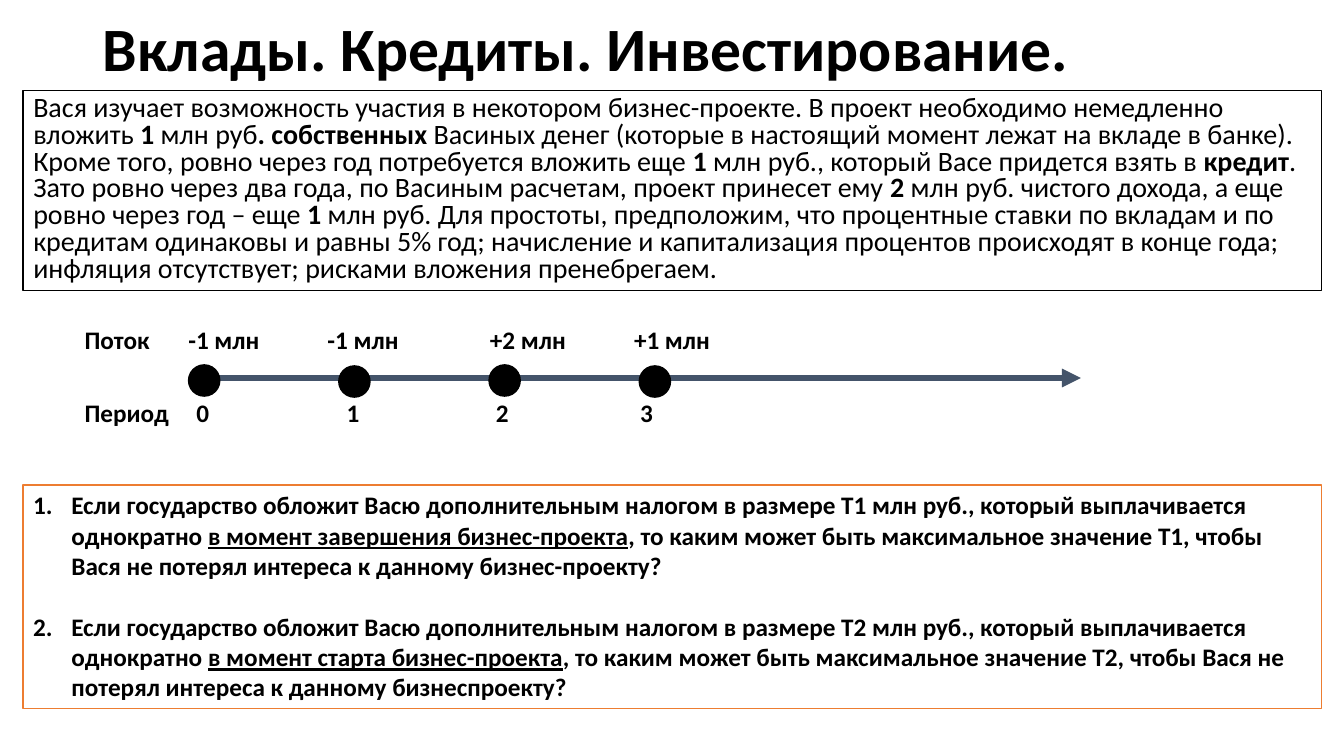
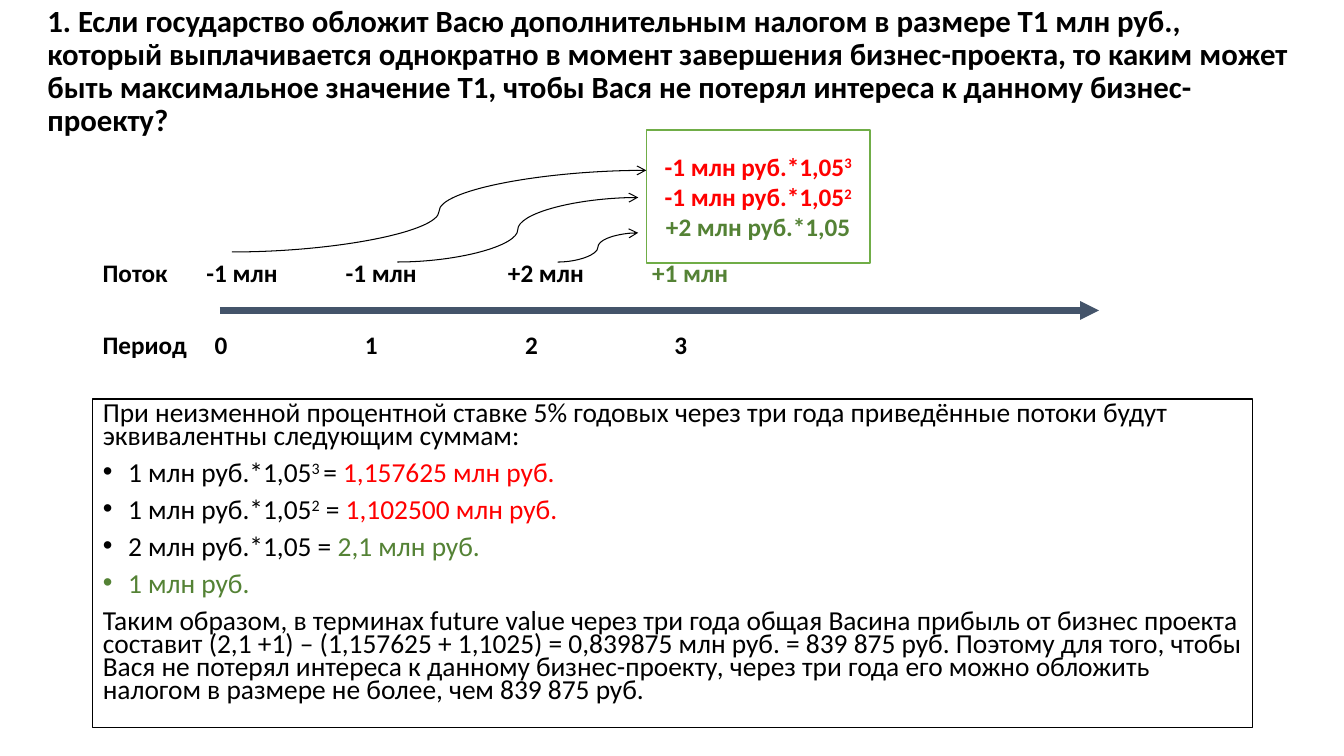
from lxml import etree
from pptx import Presentation
from pptx.dml.color import RGBColor
from pptx.enum.shapes import MSO_CONNECTOR as Link, MSO_SHAPE as Shape
from pptx.enum.text import MSO_ANCHOR as Anchor, MSO_AUTO_SIZE as Auto, PP_ALIGN as Align
from pptx.oxml.ns import qn
from pptx.util import Inches, Pt

FONT = "Calibri"
BLACK, WHITE, RED, GREEN = "000000", "FFFFFF", "FF0000", "548235"
ORANGE, LIME, SLATE = "ED7D31", "70AD47", "44546A"

# A run is a string or (text, marks...): b bold, u underlined, ^ raised, or a colour
TITLE = ["Вклады. Кредиты. Инвестирование."]
STORY = [
    "Вася изучает возможность участия в некотором бизнес-проекте. "
    "В проект необходимо немедленно вложить ", ("1", "b"), " млн руб",
    (". собственных ", "b"),
    "Васиных денег (которые в настоящий момент лежат на вкладе в банке). "
    "Кроме того, ровно через год потребуется вложить еще ", ("1", "b"),
    " млн руб., который Васе придется взять в ", ("кредит", "b"),
    ". Зато ровно через два года, по Васиным расчетам, проект принесет ему ",
    ("2", "b"), " млн руб. чистого дохода, а еще ровно через год – еще ", ("1", "b"),
    " млн руб. Для простоты, предположим, что процентные ставки по вкладам и по "
    "кредитам одинаковы и равны 5% год; начисление и капитализация процентов "
    "происходят в конце года; инфляция отсутствует; рисками вложения пренебрегаем.",
]
TASKS = [
    ("T1", "завершения", "бизнес-проекту"),
    ("T2", "старта", "бизнеспроекту"),
]
ASK = ("Если государство обложит Васю дополнительным налогом в размере {} млн руб., "
       "который выплачивается однократно ")
WHEN = "в момент {} бизнес-проекта"
LIMIT = (", то каким может быть максимальное значение {}, "
         "чтобы Вася не потерял интереса к данному {}?")

FLOWS = ["-1 млн", "-1 млн", "+2 млн", "+1 млн"]
FLOW_TABS = [1.03, 2.41, 4.02, 5.45]
TERMS = ["0", "1", "2", "3"]
TERM_TABS = [[1.11, 2.6, 4.08, 5.51], [1.11, 2.6, 4.19, 5.67]]

SUMS = [
    [("-1 млн руб.*1,05", RED), ("3", RED, "^")],
    [("-1 млн руб.*1,05", RED), ("2", RED, "^")],
    [("+2 млн руб.*1,05", GREEN)],
]
CURVES = [(2.3, 2.5, 6.41, 1.69), (3.94, 2.6, 6.33, 1.96), (5.53, 2.6, 6.33, 2.31)]
INTRO = ["При неизменной процентной ставке 5% годовых через три года "
         "приведённые потоки будут эквивалентны следующим суммам:"]
VALUES = [
    ["1 млн руб.*1,05", ("3 ", "^"), "=", (" 1,157625 млн руб.", RED)],
    ["1 млн руб.*1,05", ("2", "^"), " = ", ("1,102500 млн руб.", RED)],
    ["2 млн руб.*1,05 =", (" 2,1 млн руб.", GREEN)],
    [("1 млн руб.", GREEN)],
]
RESULT = [
    "Таким образом, в терминах future value через три года общая Васина прибыль "
    "от бизнес проекта составит (2,1 +1) – (1,157625 + 1,1025) = 0,839875 млн руб. "
    "= 839 875 руб. Поэтому для того, чтобы Вася не потерял интереса к данному "
    "бизнес-проекту, через три года его можно обложить налогом в размере не более, "
    "чем 839 875 руб."
]


def rgb(code):
    return RGBColor.from_string(code)


def box(*sizes):
    return [Inches(size) for size in sizes]


def place(shape, *sizes):
    shape.left, shape.top, shape.width, shape.height = box(*sizes)


def paint(shape, fill, line):
    shape.fill.solid()
    shape.fill.fore_color.rgb = rgb(fill)
    shape.line.color.rgb = rgb(line)
    shape.line.width = Pt(1)


def write(para, runs, size, bold=False, lines=None, before=0, align=Align.LEFT):
    para.alignment = align
    para.space_before = Pt(before)
    if lines:
        para.line_spacing = lines
    for item in runs:
        text, *marks = (item,) if isinstance(item, str) else item
        run = para.add_run()
        run.text = text
        font = run.font
        font.name, font.size = FONT, Pt(size)
        font.bold = bold or "b" in marks
        font.underline = "u" in marks
        tints = [mark for mark in marks if len(mark) == 6]
        font.color.rgb = rgb(tints[0] if tints else BLACK)
        if "^" in marks:
            run._r.get_or_add_rPr().set("baseline", "30000")


def bullet(para, tag, indent=0, **attrs):
    props = para._p.get_or_add_pPr()
    props.set("marL", str(Inches(indent)))
    props.set("indent", str(-Inches(indent)))
    etree.SubElement(props, qn("a:" + tag), attrs)


def paras(frame, count):
    """Return count paragraphs of an empty frame."""
    return [frame.paragraphs[0]] + [frame.add_paragraph() for _ in range(count - 1)]


def set_up(shape, anchor=Anchor.TOP):
    frame = shape.text_frame
    frame.word_wrap, frame.auto_size = True, Auto.NONE
    frame.vertical_anchor = anchor
    return frame


def start(deck, runs, size, spot, area):
    """Add a slide with its title; return it and its framed body text."""
    slide = deck.slides.add_slide(deck.slide_layouts[1])
    title, body = slide.placeholders
    place(title, *spot)
    write(set_up(title, Anchor.MIDDLE).paragraphs[0], runs, size, True, 0.9)
    place(body, *area)
    paint(body, WHITE, BLACK)
    return slide, set_up(body)


def panel(slide, kind, area, fill, line):
    shape = slide.shapes.add_shape(kind, *box(*area))
    shape.shadow.inherit = False
    paint(shape, fill, line)
    return shape


def arrow(slide, kind, ends, color, width, head):
    line = slide.shapes.add_connector(kind, *box(*ends))
    line.line.color.rgb = rgb(color)
    line.line.width = Pt(width)
    etree.SubElement(line.line._get_or_add_ln(), qn("a:tailEnd"), type=head)
    etree.SubElement(line._element.spPr, qn("a:effectLst"))


def row(slide, left, top, label, cells, stops):
    """Write a label and its cells on one line, set apart by tab stops."""
    frame = set_up(slide.shapes.add_textbox(*box(left, top, 6.9, 0.4)))
    para = frame.paragraphs[0]
    runs = [label]
    for cell in cells:
        text, *marks = (cell,) if isinstance(cell, str) else cell
        runs.append(("\t" + text, *marks))
    write(para, runs, 18, True)
    tabs = etree.SubElement(para._p.get_or_add_pPr(), qn("a:tabLst"))
    for stop in stops:
        etree.SubElement(tabs, qn("a:tab"), pos=str(Inches(stop)), algn="l")


def scale(slide, left, top, flows, stops):
    """Draw the time axis with flows above and periods below."""
    arrow(slide, Link.STRAIGHT, (left + 1.26, top + 0.58, left + 9.98, top + 0.58),
          SLATE, 4.5, "triangle")
    row(slide, left, top, "Поток", flows, FLOW_TABS)
    row(slide, left, top + 0.72, "Период", TERMS, stops)


def task_slide(deck):
    slide, body = start(deck, TITLE, 44, (0.92, 0.12, 11.5, 0.78),
                        (0.23, 0.9, 12.88, 1.98))
    write(body.paragraphs[0], STORY, 20, lines=0.8, before=10)
    bullet(body.paragraphs[0], "buNone")

    frame = set_up(panel(slide, Shape.RECTANGLE, (0.23, 4.81, 12.88, 2.22), WHITE, ORANGE))
    for i, (para, task) in enumerate(zip(paras(frame, len(TASKS)), TASKS)):
        tax, moment, project = task
        runs = [ASK.format(tax), (WHEN.format(moment), "u"), LIMIT.format(tax, project)]
        write(para, runs, 18, True, before=22 * i)
        bullet(para, "buAutoNum", 0.38, type="arabicPeriod")

    scale(slide, 0.74, 3.17, FLOWS, TERM_TABS[0])
    for i in range(len(TERMS)):
        dot = (1.87 + 1.49 * i, 3.62 + 0.01 * (i % 2), 0.31, 0.31)
        panel(slide, Shape.FLOWCHART_CONNECTOR, dot, BLACK, BLACK)


def answer_slide(deck):
    tax, moment, project = TASKS[0]
    title = "1. " + ASK.format(tax) + WHEN.format(moment) + LIMIT.format(tax, project)
    slide, body = start(deck, [title], 22, (0.37, 0.03, 12.59, 1.37),
                        (0.92, 3.96, 11.5, 3.26))
    texts = [INTRO, *VALUES, RESULT]
    for para, runs in zip(paras(body, len(texts)), texts):
        write(para, runs, 19.6, lines=0.7, before=10)
        if runs in VALUES:
            bullet(para, "buChar", 0.25, char="•")
        else:
            bullet(para, "buNone")

    scale(slide, 0.92, 2.5, FLOWS[:-1] + [(FLOWS[-1], GREEN)], TERM_TABS[1])
    frame = set_up(panel(slide, Shape.RECTANGLE, (6.41, 1.29, 2.22, 1.32), WHITE, LIME),
                   Anchor.MIDDLE)
    for para, runs in zip(paras(frame, len(SUMS)), SUMS):
        write(para, runs, 18, True, align=Align.CENTER)
    for ends in CURVES:
        arrow(slide, Link.CURVE, ends, BLACK, 0.75, "arrow")


def main():
    deck = Presentation()
    deck.slide_width, deck.slide_height = box(13.33, 7.5)
    task_slide(deck)
    answer_slide(deck)
    deck.save("out.pptx")


if __name__ == "__main__":
    main()
